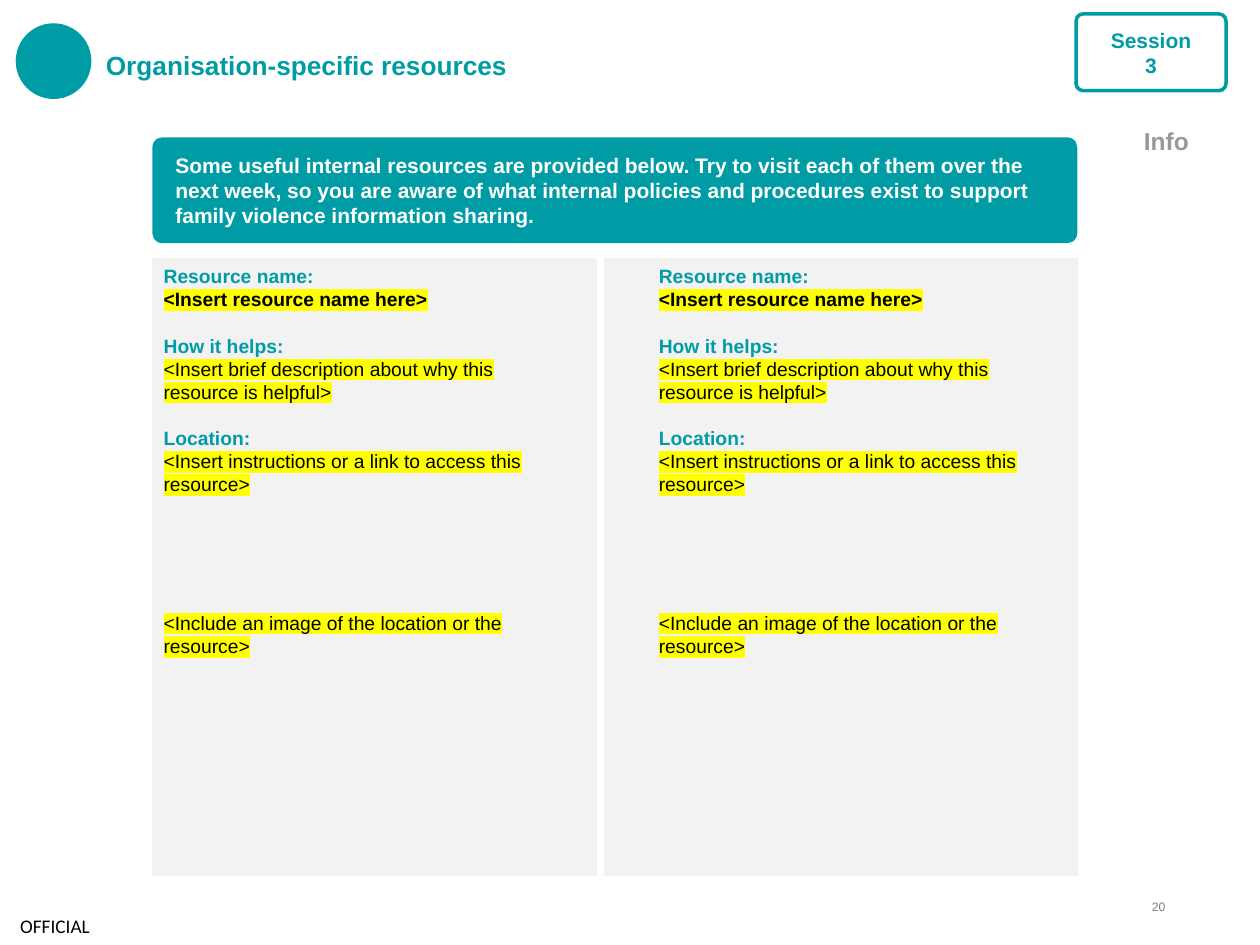
from lxml import etree
from pptx import Presentation
from pptx.dml.color import RGBColor
from pptx.enum.shapes import MSO_SHAPE
from pptx.enum.text import MSO_ANCHOR, PP_ALIGN
from pptx.oxml.ns import qn
from pptx.util import Inches, Pt

RECT, ROUND, OVAL = MSO_SHAPE.RECTANGLE, MSO_SHAPE.ROUNDED_RECTANGLE, MSO_SHAPE.OVAL
TOP, MIDDLE = MSO_ANCHOR.TOP, MSO_ANCHOR.MIDDLE
LEFT, CENTER, RIGHT = PP_ALIGN.LEFT, PP_ALIGN.CENTER, PP_ALIGN.RIGHT

THEME = {
    "teal": "009CA6", "white": "FFFFFF", "black": "000000", "panel": "F2F2F2",
    "grey": "96999E", "number": "7F7F7F", "marker": "FFFF00",
    "font": "Arial", "footer_font": "Calibri",
    "title": 15, "info": 14, "lead": 12, "body": 11, "page": 7,
    "blank_line": 13.2, "corner": 0.094,
}
CELL = Inches(0.1)
COLUMNS, ROWS = 100, 75

deck = Presentation()
deck.slide_width, deck.slide_height = COLUMNS * CELL, ROWS * CELL
slide = deck.slides.add_slide(deck.slide_layouts[6])


def add_panel(preset, column, row, columns, rows, fill, line=None, weight=0.75):
    panel = slide.shapes.add_shape(
        preset, *(round(n * CELL) for n in (column, row, columns, rows)))
    panel.shadow.inherit = False
    panel.fill.solid()
    panel.fill.fore_color.rgb = RGBColor.from_string(THEME[fill])
    if line:
        panel.line.color.rgb = RGBColor.from_string(THEME[line])
        panel.line.width = Pt(weight)
    else:
        panel.line.fill.background()
    if preset == ROUND:
        panel.adjustments[0] = THEME["corner"]
    return panel


def write(text, area=None, panel=None, size="body", color="teal", bold=True, font="font",
          align=LEFT, anchor=TOP, insets=(1, 0.5), marked=False, lines_before=0):
    if panel is None:
        panel = slide.shapes.add_textbox(*(round(n * CELL) for n in area))
    frame = panel.text_frame
    paragraph = frame.add_paragraph() if frame.text else frame.paragraphs[0]
    frame.word_wrap = True
    frame.vertical_anchor = anchor
    frame.margin_left = frame.margin_right = round(insets[0] * CELL)
    frame.margin_top = frame.margin_bottom = round(insets[1] * CELL)
    paragraph.alignment = align
    if lines_before:
        paragraph.space_before = Pt(lines_before * THEME["blank_line"])
    run = paragraph.add_run()
    run.text = text
    run.font.size = Pt(THEME[size])
    run.font.bold = bold
    run.font.color.rgb = RGBColor.from_string(THEME[color])
    if marked:
        highlight = etree.SubElement(run.font._element, qn("a:highlight"))
        etree.SubElement(highlight, qn("a:srgbClr"), val=THEME["marker"])
    run.font.name = THEME[font]
    return panel


write("OFFICIAL", (1.6, 71.9, 8, 3.1), color="black", bold=False, font="footer_font",
      anchor=MIDDLE, insets=(0, 0))

add_panel(OVAL, 1.3, 1.9, 5.9, 5.9, "teal", "teal")
write("Organisation-specific resources", (8.4, 1.9, 71.1, 6.5), size="title",
      anchor=MIDDLE, insets=(0, 0))

session = add_panel(ROUND, 85.4, 1.1, 11.9, 6.1, "white", "teal", 2)
write("Session 3", panel=session, size="lead", align=CENTER, anchor=MIDDLE, insets=(2, 0.5))
write("Info", (89.8, 9.5, 10.2, 3.4), size="info", color="grey")

introduction = add_panel(ROUND, 12.1, 10.9, 73.4, 8.4, "teal")
write("Some useful internal resources are provided below. Try to visit each of them over "
      "the next week, so you are aware of what internal policies and procedures exist to "
      "support family violence information sharing.",
      panel=introduction, size="lead", color="white", anchor=MIDDLE, insets=(1.6, 0.5))

heading = {"color": "teal", "bold": True}
prompt = {"color": "black", "bold": False, "marked": True}
resource_entries = [
    ("Resource name:", heading, 0),
    ("<Insert resource name here>", {**prompt, "bold": True}, 0),
    ("How it helps:", heading, 1),
    ("<Insert brief description about why this resource is helpful>", prompt, 0),
    ("Location:", heading, 1),
    ("<Insert instructions or a link to access this resource>", prompt, 0),
    ("<Include an image of the location or the resource>", prompt, 5),
]
resource_columns = [(12.1, 35.2, 12, 32.5), (48, 37.5, 51.3, 34.1)]
for panel_column, panel_width, text_column, text_width in resource_columns:
    add_panel(RECT, panel_column, 20.5, panel_width, 49, "panel", "panel")
    resource = None
    for entry, style, gap in resource_entries:
        resource = write(entry, (text_column, 20.5, text_width, 37.2), resource,
                         lines_before=gap, **style)

write("20", (89.1, 71.4, 3.4, 2), size="page", color="number", bold=False,
      align=RIGHT, insets=(0, 0))

deck.save("out.pptx")
